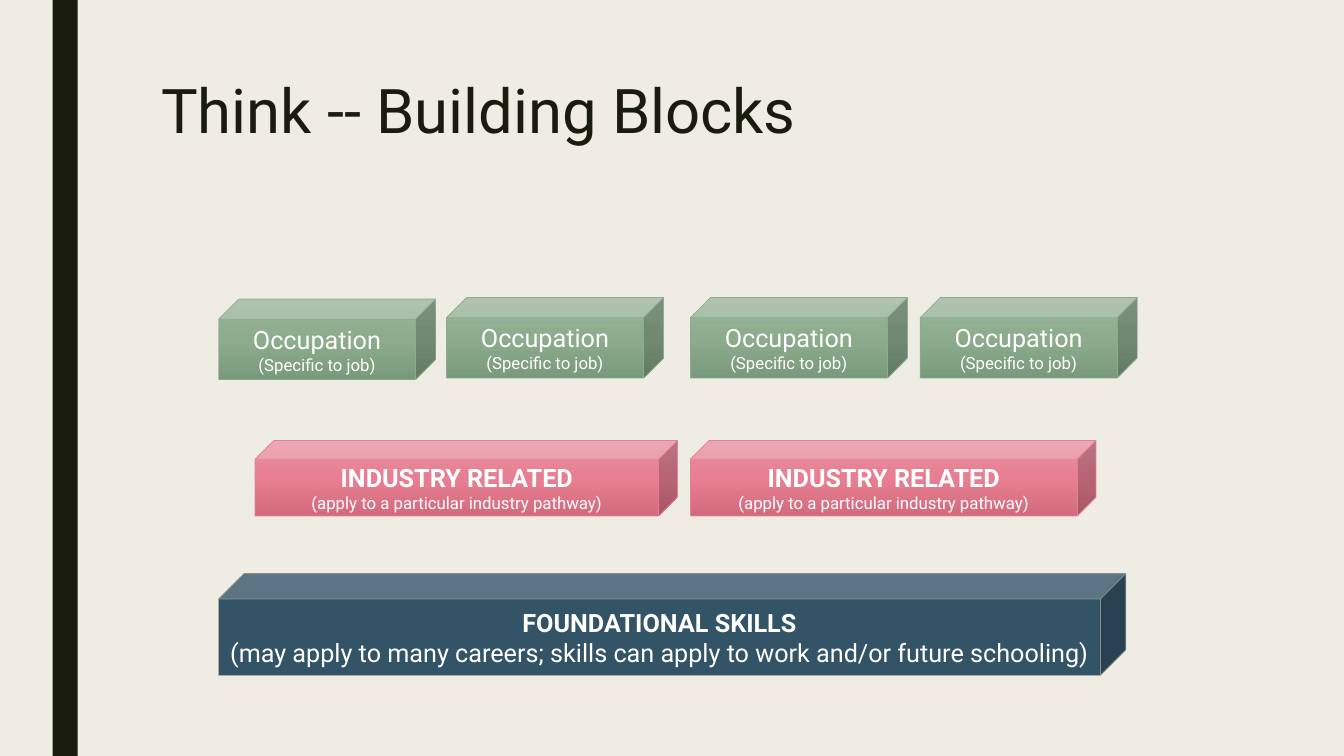
"""Build the building blocks slide: occupations, industries and foundational skills."""
from copy import deepcopy
from dataclasses import dataclass

from pptx import Presentation
from pptx.dml.color import RGBColor
from pptx.enum.shapes import MSO_SHAPE
from pptx.enum.text import MSO_ANCHOR, PP_ALIGN
from pptx.oxml.ns import qn
from pptx.shapes.autoshape import Shape
from pptx.slide import Slide
from pptx.text.text import _Paragraph as Paragraph
from pptx.util import Pt

CREAM = RGBColor(0xEF, 0xED, 0xE3)
INK = RGBColor(0x19, 0x1B, 0x0E)
WHITE = RGBColor(0xFF, 0xFF, 0xFF)
NAVY = RGBColor(0x33, 0x53, 0x66)
GRAY = RGBColor(0x8C, 0x8D, 0x86)
PINK_LIGHT = RGBColor(0xE7, 0x93, 0xA2)
PINK = RGBColor(0xE7, 0x7E, 0x91)
PINK_DARK = RGBColor(0xD3, 0x6B, 0x7D)
PINK_LINE = RGBColor(0xE2, 0x83, 0x94)
GREEN_LIGHT = RGBColor(0x9B, 0xB5, 0x9B)
GREEN = RGBColor(0x8C, 0xAC, 0x8D)
GREEN_DARK = RGBColor(0x7A, 0x9B, 0x7B)
GREEN_LINE = RGBColor(0x8D, 0xAB, 0x8E)

FRAME_FORMAT = {"word_wrap": True, "vertical_anchor": MSO_ANCHOR.MIDDLE}


@dataclass(frozen=True)
class BlockStyle:
    """Wording and colours shared by the blocks of one level."""

    heading: str
    detail: str
    detail_size: float
    heading_bold: bool
    fills: tuple[RGBColor, ...]
    line: RGBColor


@dataclass(frozen=True)
class Block:
    """One cube, with its place in points."""

    style: BlockStyle
    left: float
    top: float
    width: float
    height: float


FOUNDATION = BlockStyle(
    "FOUNDATIONAL SKILLS",
    "(may apply to many careers; skills can apply to work and/or future schooling)",
    18, True, (NAVY,), GRAY,
)
INDUSTRY = BlockStyle(
    "INDUSTRY RELATED", "(apply to a particular industry pathway)",
    12, True, (PINK_LIGHT, PINK, PINK_DARK), PINK_LINE,
)
OCCUPATION = BlockStyle(
    "Occupation", "(Specific to job)",
    12, False, (GREEN_LIGHT, GREEN, GREEN_DARK), GREEN_LINE,
)

BLOCKS = [
    Block(FOUNDATION, 156.2, 409.7, 648, 72.7),
    Block(INDUSTRY, 182.2, 314.6, 301.7, 54),
    Block(INDUSTRY, 493.2, 314.6, 289.7, 54),
    *(
        Block(OCCUPATION, left, top, 155, 57.6)
        for left, top in [(156.2, 213.6), (319, 212.5), (493.2, 212.5), (657.3, 212.5)]
    ),
]


def write_run(
    paragraph: Paragraph, text: str, size: float, color: RGBColor, bold: bool = False
) -> None:
    """Add a formatted run to a paragraph."""
    run = paragraph.add_run()
    run.text = text
    font_format = {"name": "Roboto", "size": Pt(size), "bold": bold}
    for name, value in font_format.items():
        setattr(run.font, name, value)
    run.font.color.rgb = color


def fill_shape(shape: Shape, colors: tuple[RGBColor, ...]) -> None:
    """Fill a shape with one colour or with a downward three-stop gradient."""
    if len(colors) == 1:
        shape.fill.solid()
        shape.fill.fore_color.rgb = colors[0]
        return
    shape.fill.gradient()
    shape.fill.gradient_angle = 270
    stop_list = shape.element.spPr.find(f".//{qn('a:gsLst')}")
    stop_list.insert(1, deepcopy(stop_list[0]))
    for stop, color, position in zip(shape.fill.gradient_stops, colors, (0, 0.5, 1)):
        stop.color.rgb = color
        stop.position = position


def draw_block(slide: Slide, block: Block) -> None:
    """Draw a cube with its heading and detail."""
    style = block.style
    shape = slide.shapes.add_shape(
        MSO_SHAPE.CUBE, Pt(block.left), Pt(block.top), Pt(block.width), Pt(block.height)
    )
    shape.shadow.inherit = False
    fill_shape(shape, style.fills)
    shape.line.color.rgb = style.line
    shape.line.width = Pt(0.5)
    frame = shape.text_frame
    for name, value in FRAME_FORMAT.items():
        setattr(frame, name, value)
    heading, detail = frame.paragraphs[0], frame.add_paragraph()
    heading.alignment = detail.alignment = PP_ALIGN.CENTER
    write_run(heading, style.heading, 18, WHITE, style.heading_bold)
    write_run(detail, style.detail, style.detail_size, WHITE)


def draw_side_bar(slide: Slide) -> None:
    """Draw the dark bar along the left edge."""
    bar = slide.shapes.add_shape(MSO_SHAPE.RECTANGLE, Pt(37.5), Pt(0), Pt(18), Pt(540))
    bar.shadow.inherit = False
    fill_shape(bar, (INK,))
    bar.line.fill.background()


def draw_title(slide: Slide) -> None:
    """Write the slide title."""
    title = slide.shapes.add_textbox(Pt(108), Pt(54), Pt(756), Pt(117))
    title.text_frame.word_wrap = True
    paragraph = title.text_frame.paragraphs[0]
    paragraph.line_spacing = 0.89
    write_run(paragraph, "Think -- Building Blocks", 44, INK)


def main() -> None:
    """Build and save the presentation."""
    presentation = Presentation()
    presentation.slide_width, presentation.slide_height = Pt(960), Pt(540)
    slide = presentation.slides.add_slide(presentation.slide_layouts[6])
    slide.background.fill.solid()
    slide.background.fill.fore_color.rgb = CREAM
    draw_side_bar(slide)
    draw_title(slide)
    for block in BLOCKS:
        draw_block(slide, block)
    presentation.save("out.pptx")


if __name__ == "__main__":
    main()
